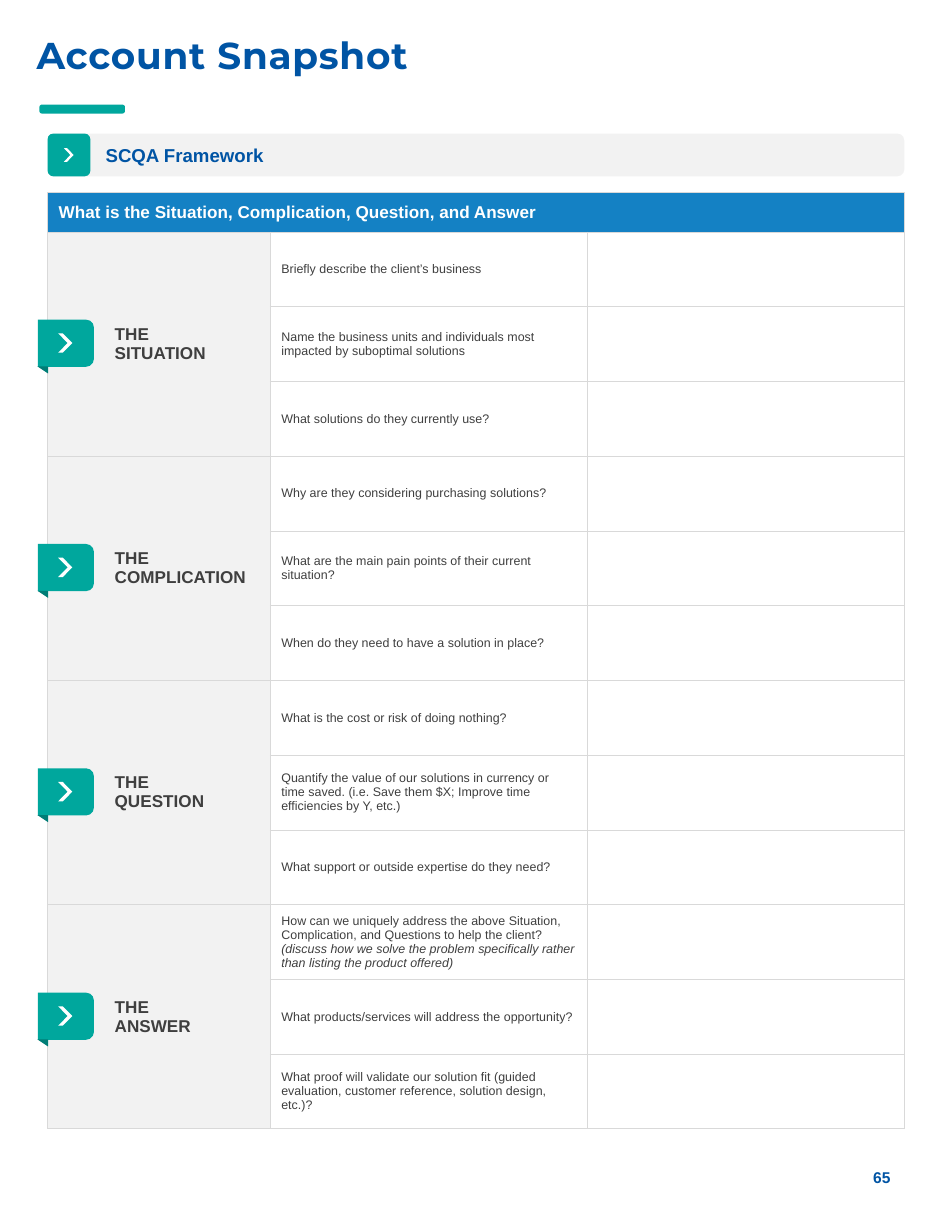
from dataclasses import dataclass

from lxml import etree
from pptx import Presentation, util as u
from pptx.dml.color import RGBColor
from pptx.enum import shapes, text
from pptx.oxml.ns import qn

Cm, Pt = u.Cm, u.Pt
MS = shapes.MSO_SHAPE
ANCHOR, ALIGN = text.MSO_ANCHOR, text.PP_ALIGN
TEAL, DARK_TEAL, NAVY, BLUE = "00A79D", "007D76", "0054A4", "1481C4"
WHITE, PALE, GRID, INK = "FFFFFF", "F2F2F2", "D9D9D9", "3F3F3F"
ROW_H = 20.35 / 12
COLS = (5.05, 7.19, 7.19)
BADGE_Y = 7.78


@dataclass
class Section:
    label: str
    prompts: tuple[str, ...]
    hint: str = ""


SECTIONS = [
    Section("THE \nSITUATION", (
        "Briefly describe the client’s business",
        "Name the business units and individuals most impacted by suboptimal solutions",
        "What solutions do they currently use?")),
    Section("THE COMPLICATION", (
        "Why are they considering purchasing solutions?",
        "What are the main pain points of their current situation?",
        "When do they need to have a solution in place?")),
    Section("THE \nQUESTION", (
        "What is the cost or risk of doing nothing?",
        "Quantify the value of our solutions in currency or time saved. "
        "(i.e. Save them $X; Improve time efficiencies by Y, etc.)",
        "What support or outside expertise do they need?")),
    Section("THE \nANSWER", (
        "How can we uniquely address the above Situation, Complication, and Questions "
        "to help the client? ",
        "What products/services will address the opportunity?",
        "What proof will validate our solution fit (guided evaluation, customer reference, "
        "solution design, etc.)?"),
        "(discuss how we solve the problem specifically rather than listing the product offered)"),
]


def rgb(value: str) -> RGBColor:
    return RGBColor.from_string(value)


def style(p, size: float, color: str, bold: bool = True, name: str = "Arial") -> None:
    f = p.font
    f.size, f.bold, f.name = Pt(size), bold, name
    f.color.rgb = rgb(color)


def add_shape(slide, kind, x: float, y: float, w: float, h: float, color: str,
              adj: float | None = None, rotation: float = 0):
    sp = slide.shapes.add_shape(kind, Cm(x), Cm(y), Cm(w), Cm(h))
    sp.shadow.inherit = False
    sp.fill.solid()
    sp.fill.fore_color.rgb = rgb(color)
    sp.line.fill.background()
    sp.rotation = rotation
    if adj is not None:
        sp.adjustments[0] = adj
    return sp


def add_text(slide, x: float, y: float, w: float, h: float, words: str):
    tf = slide.shapes.add_textbox(Cm(x), Cm(y), Cm(w), Cm(h)).text_frame
    tf.word_wrap = True
    tf.vertical_anchor = ANCHOR.MIDDLE
    p = tf.paragraphs[0]
    p.text = words
    return p


def add_badge(slide, y: float) -> None:
    add_shape(slide, MS.ROUND_2_SAME_RECTANGLE, 0.96, y - 0.63, 1.07, 1.27, TEAL, rotation=90)
    add_shape(slide, MS.CHEVRON, 1.32, y - 0.22, 0.32, 0.44, WHITE, 0.672)
    add_shape(slide, MS.RIGHT_TRIANGLE, 0.85, y + 0.53, 0.24, 0.16, DARK_TEAL, rotation=180)


def format_cell(cell, color: str, left: float = 0.25) -> None:
    tc_pr = cell._tc.get_or_add_tcPr()
    for side in ("lnL", "lnR", "lnT", "lnB"):
        ln = etree.SubElement(tc_pr, qn(f"a:{side}"), w=str(Pt(0.5)))
        fill = etree.SubElement(ln, qn("a:solidFill"))
        etree.SubElement(fill, qn("a:srgbClr"), val=GRID)
    cell.fill.solid()
    cell.fill.fore_color.rgb = rgb(color)
    cell.margin_left, cell.margin_right = Cm(left), Cm(0.25)
    cell.margin_top = cell.margin_bottom = 0
    cell.vertical_anchor = ANCHOR.MIDDLE


def write_cell(cell, words: str, size: float, color: str, bold: bool = True):
    p = cell.text_frame.paragraphs[0]
    p.text = words
    style(p, size, color, bold)
    return p


def add_framework_table(slide) -> None:
    n = 1 + sum(len(s.prompts) for s in SECTIONS)
    table = slide.shapes.add_table(n, len(COLS), Cm(1.08), Cm(4.37), Cm(sum(COLS)),
                                   Cm(0.89 + ROW_H * (n - 1))).table
    for col, width in zip(table.columns, COLS):
        col.width = Cm(width)
    for i, row in enumerate(table.rows):
        row.height = Cm(ROW_H if i else 0.89)
        for j, cell in enumerate(row.cells):
            label = i > 0 and j == 0
            format_cell(cell, BLUE if i == 0 else PALE if label else WHITE, 1.52 if label else 0.25)
    table.cell(0, 0).merge(table.cell(0, len(COLS) - 1))
    write_cell(table.cell(0, 0), "What is the Situation, Complication, Question, and Answer", 11, WHITE)
    top = 1
    for section in SECTIONS:
        size = len(section.prompts)
        table.cell(top, 0).merge(table.cell(top + size - 1, 0))
        write_cell(table.cell(top, 0), section.label, 11, INK)
        paragraphs = [write_cell(table.cell(top + k, 1), prompt, 8, INK, False)
                      for k, prompt in enumerate(section.prompts)]
        if section.hint:
            r = paragraphs[0].add_run()
            r.text = section.hint
            r.font.italic = True
        top += size


def add_banner(slide) -> None:
    sp = add_shape(slide, MS.ROUNDED_RECTANGLE, 1.08, 3.03, 19.43, 0.97, PALE, 0.165)
    tf = sp.text_frame
    tf.margin_left, tf.margin_right = Cm(1.27), Cm(0.25)
    tf.margin_top = tf.margin_bottom = 0
    tf.vertical_anchor = ANCHOR.MIDDLE
    p = tf.paragraphs[0]
    p.text = "SCQA Framework"
    p.alignment = ALIGN.LEFT
    style(p, 12, NAVY)
    add_shape(slide, MS.ROUNDED_RECTANGLE, 1.08, 3.03, 0.97, 0.97, TEAL, 0.132)
    add_shape(slide, MS.CHEVRON, 1.45, 3.36, 0.22, 0.31, WHITE, 0.672)


def main() -> None:
    """Build the account snapshot page and save it."""
    prs = Presentation()
    prs.slide_width, prs.slide_height = Cm(21.59), Cm(27.94)
    slide = prs.slides.add_slide(prs.slide_layouts[6])
    bar = add_shape(slide, MS.ROUNDED_RECTANGLE, 0.93, 2.41, 1.87, 0.13, TEAL)
    bar.line.color.rgb = rgb(TEAL)
    bar.line.width = Pt(2)
    title = add_text(slide, 0.58, 0, 21, 2.49, "Account Snapshot")
    style(title, 24, NAVY, name="Montserrat")
    title.runs[0]._r.get_or_add_rPr().set("spc", "50")
    number = add_text(slide, 19.48, 26.09, 1.04, 1.22, "65")
    number.alignment = ALIGN.CENTER
    style(number, 10, NAVY)
    add_framework_table(slide)
    for i in range(len(SECTIONS)):
        add_badge(slide, BADGE_Y + 3 * ROW_H * i)
    add_banner(slide)
    prs.save("out.pptx")


if __name__ == "__main__":
    main()
